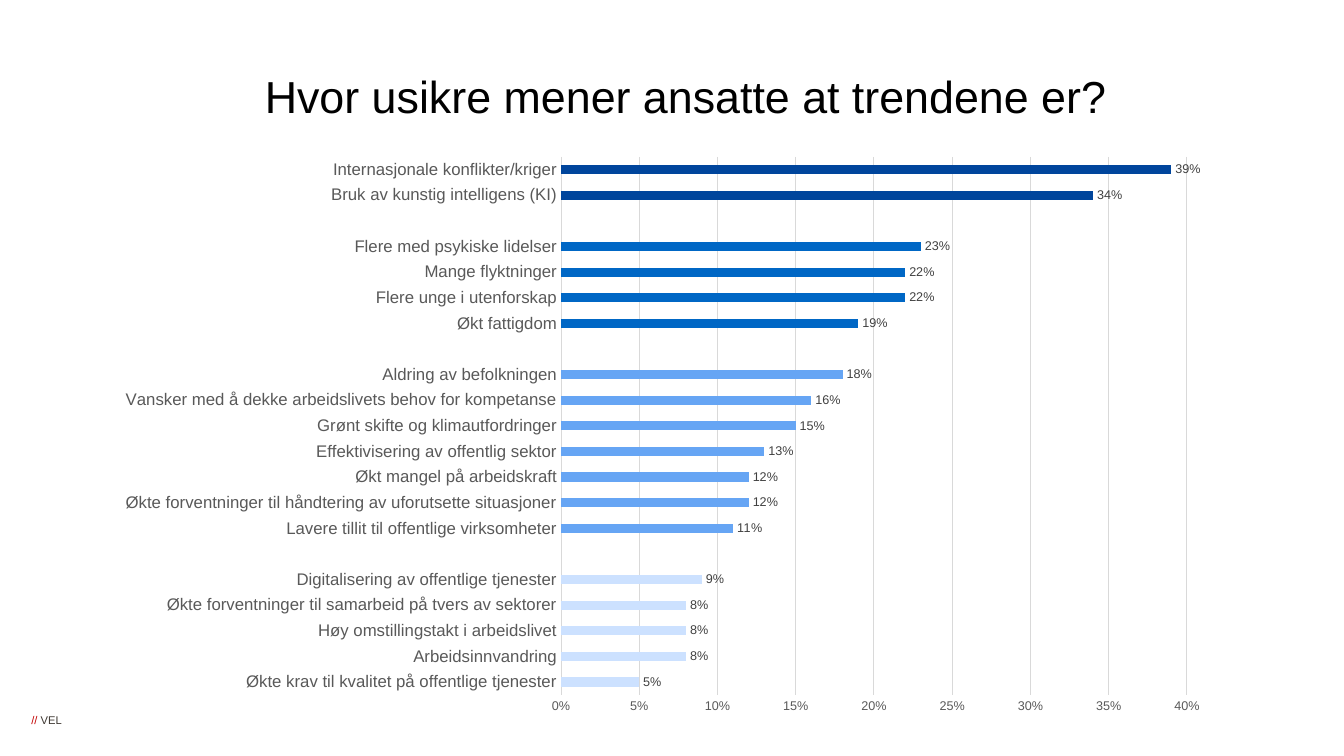
from lxml import etree
from pptx import Presentation
from pptx.chart.data import CategoryChartData
from pptx.dml.color import RGBColor
from pptx.enum.chart import XL_CHART_TYPE, XL_LABEL_POSITION, XL_TICK_MARK
from pptx.enum.text import MSO_ANCHOR, PP_ALIGN
from pptx.oxml.ns import qn
from pptx.util import Cm, Pt

BAR_CLUSTERED = XL_CHART_TYPE.BAR_CLUSTERED
OUTSIDE_END = XL_LABEL_POSITION.OUTSIDE_END
NO_TICK = XL_TICK_MARK.NONE
CENTER = PP_ALIGN.CENTER
MIDDLE = MSO_ANCHOR.MIDDLE
TITLE_ONLY = 5
FONT = "Arial"
GREY_TEXT = "595959"
GREY_LINE = "D9D9D9"

# Trend groups from top to bottom: bar colour and share who find each uncertain
TREND_GROUPS = [
    ("00459C", [
        ("Internasjonale konflikter/kriger", 0.39),
        ("Bruk av kunstig intelligens (KI)", 0.34),
    ]),
    ("0067C5", [
        ("Flere med psykiske lidelser", 0.23),
        ("Mange flyktninger", 0.22),
        ("Flere unge i utenforskap", 0.22),
        ("Økt fattigdom", 0.19),
    ]),
    ("66A5F4", [
        ("Aldring av befolkningen", 0.18),
        ("Vansker med å dekke arbeidslivets behov for kompetanse", 0.16),
        ("Grønt skifte og klimautfordringer", 0.15),
        ("Effektivisering av offentlig sektor", 0.13),
        ("Økt mangel på arbeidskraft", 0.12),
        ("Økte forventninger til håndtering av uforutsette situasjoner", 0.12),
        ("Lavere tillit til offentlige virksomheter", 0.11),
    ]),
    ("CCE1FF", [
        ("Digitalisering av offentlige tjenester", 0.09),
        ("Økte forventninger til samarbeid på tvers av sektorer", 0.08),
        ("Høy omstillingstakt i arbeidslivet", 0.08),
        ("Arbeidsinnvandring", 0.08),
        ("Økte krav til kvalitet på offentlige tjenester", 0.05),
    ]),
]


def rgb(hex_colour):
    return RGBColor.from_string(hex_colour)


def style_font(font, size, colour):
    font.name = FONT
    font.size = Pt(size)
    font.color.rgb = rgb(colour)


def style_line(line, colour):
    line.color.rgb = rgb(colour)
    line.width = Pt(0.75)


def trend_bars():
    """Return (label, value, colour) from the bottom bar up, with a gap between groups."""
    bars = []
    for colour, trends in reversed(TREND_GROUPS):
        if bars:
            bars.append(("", None, None))
        bars += [(label, value, colour) for label, value in reversed(trends)]
    return bars


def set_plot_area(chart, **fractions):
    """Place the inner plot area by fractions of the chart frame."""
    plot_area = chart._chartSpace.chart.plotArea
    for old_layout in plot_area.findall(qn("c:layout")):
        plot_area.remove(old_layout)
    layout = etree.Element(qn("c:layout"))
    manual = etree.SubElement(layout, qn("c:manualLayout"))
    settings = {"layoutTarget": "inner", "xMode": "edge", "yMode": "edge", **fractions}
    for tag, value in settings.items():
        etree.SubElement(manual, qn(f"c:{tag}")).set("val", str(value))
    plot_area.insert(0, layout)


def add_title(slide, text):
    title = slide.shapes.title
    title.left, title.top = Cm(2.34), Cm(1.02)
    title.width, title.height = Cm(29.9), Cm(2.97)
    frame = title.text_frame
    frame.text = text
    frame.vertical_anchor = MIDDLE
    paragraph = frame.paragraphs[0]
    paragraph.alignment = CENTER
    paragraph.line_spacing = 0.9
    style_font(paragraph.runs[0].font, 32, "000000")


def add_footer(slide, parts):
    footer = slide.shapes.add_textbox(Cm(0.79), Cm(17.98), Cm(1.2), Cm(0.33))
    frame = footer.text_frame
    frame.margin_left = frame.margin_top = frame.margin_right = frame.margin_bottom = 0
    frame.word_wrap = False
    for text, colour in parts:
        run = frame.paragraphs[0].add_run()
        run.text = text
        style_font(run.font, 8, colour)


def style_axes(chart):
    trend_axis = chart.category_axis
    trend_axis.major_tick_mark = trend_axis.minor_tick_mark = NO_TICK
    style_font(trend_axis.tick_labels.font, 12, GREY_TEXT)
    style_line(trend_axis.format.line, GREY_LINE)

    share_axis = chart.value_axis
    share_axis.minimum_scale, share_axis.maximum_scale = 0, 0.4
    share_axis.major_unit = 0.05
    share_axis.major_tick_mark = share_axis.minor_tick_mark = NO_TICK
    share_axis.tick_labels.number_format = "0%"
    share_axis.tick_labels.number_format_is_linked = False
    style_font(share_axis.tick_labels.font, 9, GREY_TEXT)
    share_axis.format.line.fill.background()
    share_axis.has_major_gridlines = True
    style_line(share_axis.major_gridlines.format.line, GREY_LINE)


def add_trend_chart(slide):
    bars = trend_bars()
    chart_data = CategoryChartData(number_format="0%")
    chart_data.categories = [label for label, _, _ in bars]
    chart_data.add_series("Series 1", [value for _, value, _ in bars])
    chart = slide.shapes.add_chart(
        BAR_CLUSTERED, Cm(2.59), Cm(3.66), Cm(28.17), Cm(14.58), chart_data).chart
    chart.has_legend = chart.has_title = False
    style_font(chart.font, 10, "000000")
    set_plot_area(chart, x=0.41, y=0.02, w=0.56, h=0.93)
    style_axes(chart)

    # Bars coloured by group
    plot = chart.plots[0]
    plot.gap_width = 182
    plot.vary_by_categories = False
    series = plot.series[0]
    series.format.fill.solid()
    series.format.fill.fore_color.rgb = rgb("C30000")
    for index, (_, _, colour) in enumerate(bars):
        if colour:
            fill = series.points[index].format.fill
            fill.solid()
            fill.fore_color.rgb = rgb(colour)

    # Value labels
    labels = series.data_labels
    labels.show_value = True
    labels.position = OUTSIDE_END
    labels.number_format = "0%"
    labels.number_format_is_linked = False
    style_font(labels.font, 9, "404040")


def main():
    prs = Presentation()
    prs.slide_width, prs.slide_height = Cm(33.87), Cm(19.05)
    slide = prs.slides.add_slide(prs.slide_layouts[TITLE_ONLY])
    add_footer(slide, [("// ", "C30000"), ("VEL", "3E3832")])
    add_title(slide, "Hvor usikre mener ansatte at trendene er?")
    add_trend_chart(slide)
    prs.save("out.pptx")


if __name__ == "__main__":
    main()
